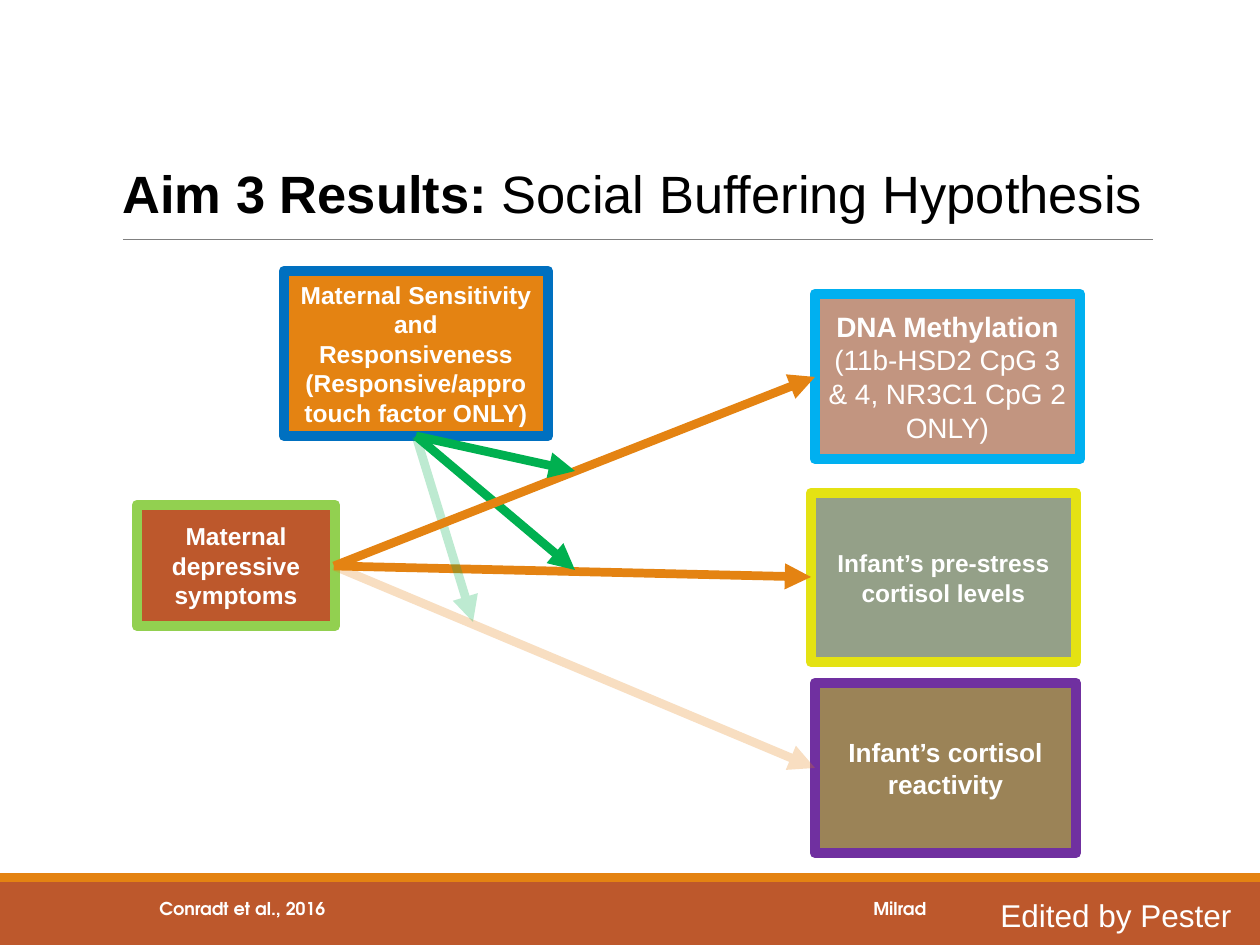
from lxml.etree import SubElement
from pptx import Presentation
from pptx.dml.color import RGBColor
from pptx.enum.shapes import MSO_CONNECTOR, MSO_SHAPE
from pptx.enum.text import MSO_ANCHOR, PP_ALIGN
from pptx.oxml.ns import qn
from pptx.util import Emu, Pt

PX_PER_INCH = 126
PAGE_WIDTH, PAGE_HEIGHT = 1260, 945

WHITE = RGBColor(0xFF, 0xFF, 0xFF)
BLACK = RGBColor(0x00, 0x00, 0x00)
GRAY = RGBColor(0x80, 0x80, 0x80)
ORANGE = RGBColor(0xE4, 0x83, 0x12)
RUST = RGBColor(0xBD, 0x58, 0x2C)
SAGE = RGBColor(0x94, 0xA0, 0x88)
OLIVE = RGBColor(0x9B, 0x83, 0x57)
ROSE = RGBColor(0xC2, 0x95, 0x80)
BLUE = RGBColor(0x00, 0x70, 0xC0)
SKY = RGBColor(0x00, 0xB0, 0xF0)
LIME = RGBColor(0x92, 0xD0, 0x50)
YELLOW = RGBColor(0xE4, 0xE2, 0x13)
PURPLE = RGBColor(0x70, 0x30, 0xA0)
GREEN = RGBColor(0x00, 0xB0, 0x50)

BODY_FONT = "Arial"
FOOTER_FONT = "TeX Gyre Adventor"


def px(length):
    return Emu(round(length * 914400 / PX_PER_INCH))


class Diagram:
    """Draws the elements of one slide in a shared style."""

    def __init__(self, page):
        self.shapes = page.shapes

    def style(self, paragraph, size, color=WHITE, bold=None, name=BODY_FONT):
        font = paragraph.font
        font.name, font.size, font.bold = name, Pt(size), bold
        font.color.rgb = color

    def band(self, left, top, width, height, fill):
        shape = self.shapes.add_shape(
            MSO_SHAPE.RECTANGLE, px(left), px(top), px(width), px(height))
        shape.shadow.inherit = False
        shape.fill.solid()
        shape.fill.fore_color.rgb = fill
        shape.line.fill.background()
        return shape

    def box(self, place, fill, border, size, lines):
        """Add a bordered box; lines holds (text, bold) for each paragraph."""
        shape = self.band(*place, fill)
        shape.line.color.rgb = border
        shape.line.width = Pt(6)
        frame = shape.text_frame
        frame.word_wrap = True
        frame.vertical_anchor = MSO_ANCHOR.MIDDLE
        for index, (text, bold) in enumerate(lines):
            paragraph = frame.add_paragraph() if index else frame.paragraphs[0]
            paragraph.text = text
            paragraph.alignment = PP_ALIGN.CENTER
            self.style(paragraph, size, bold=bold)

    def line(self, start, end, color, width):
        connector = self.shapes.add_connector(
            MSO_CONNECTOR.STRAIGHT, *map(px, start + end))
        connector.line.color.rgb = color
        connector.line.width = Pt(width)
        SubElement(connector._element.spPr, qn("a:effectLst"))
        return connector

    def arrow(self, start, end, color, opacity=100):
        stroke = self.line(start, end, color, 5).line._get_or_add_ln()
        SubElement(stroke, qn("a:tailEnd"), type="triangle")
        if opacity < 100:
            tint = stroke.find(".//" + qn("a:srgbClr"))
            SubElement(tint, qn("a:alpha"), val=str(opacity * 1000))

    def text(self, place, spans, size, wrap=True, **look):
        """Add one line of text; spans holds (text, bold) for each run."""
        frame = self.shapes.add_textbox(*map(px, place)).text_frame
        frame.word_wrap = wrap
        paragraph = frame.paragraphs[0]
        self.style(paragraph, size, **look)
        for content, bold in spans:
            span = paragraph.add_run()
            span.text = content
            span.font.bold = bold


def main():
    deck = Presentation()
    deck.slide_width, deck.slide_height = px(PAGE_WIDTH), px(PAGE_HEIGHT)
    diagram = Diagram(deck.slides.add_slide(deck.slide_layouts[6]))

    symptoms_edge = (334, 566)
    sensitivity_edge = (416, 436)

    diagram.band(0, 882, PAGE_WIDTH, 63, RUST)
    diagram.band(0, 873, PAGE_WIDTH, 9, ORANGE)
    diagram.line((123, 239), (1153, 239), GRAY, 0.5)

    diagram.box((284, 271, 264, 165), ORANGE, BLUE, 14, [
        ("Maternal Sensitivity and Responsiveness", True),
        ("(Responsive/appro touch factor ONLY)", True)])
    diagram.box((137, 505, 198, 121), RUST, LIME, 14,
                [("Maternal depressive symptoms", True)])
    diagram.box((811, 493, 265, 169), SAGE, YELLOW, 14,
                [("Infant’s pre-stress cortisol levels", True)])
    diagram.arrow(symptoms_edge, (811, 577), ORANGE)
    diagram.text((110, 155, 1055, 77),
                 [("Aim 3 Results: ", True), ("Social Buffering Hypothesis", False)],
                 30, wrap=False, color=BLACK)
    diagram.box((815, 683, 261, 170), OLIVE, PURPLE, 15,
                [("Infant’s cortisol reactivity", True)])
    diagram.arrow(symptoms_edge, (815, 768), ORANGE, opacity=25)
    diagram.arrow(sensitivity_edge, (473, 622), GREEN, opacity=25)
    diagram.arrow(sensitivity_edge, (575, 570), GREEN)

    for left, width, credit in ((147, 465, "Conradt et al., 2016"),
                                (861, 127, "Milrad")):
        diagram.text((left, 892, width, 34), [(credit, True)], 10.1,
                     name=FOOTER_FONT)

    diagram.box((815, 294, 265, 165), ROSE, SKY, 16, [
        ("DNA Methylation", True),
        ("(11b-HSD2 CpG 3 & 4, NR3C1 CpG 2", False),
        ("ONLY)", False)])
    diagram.arrow(symptoms_edge, (815, 377), ORANGE)
    diagram.arrow(sensitivity_edge, (575, 471), GREEN)
    diagram.text((988, 890, 272, 50), [("Edited by Pester", False)], 18)

    deck.save("out.pptx")


if __name__ == "__main__":
    main()
